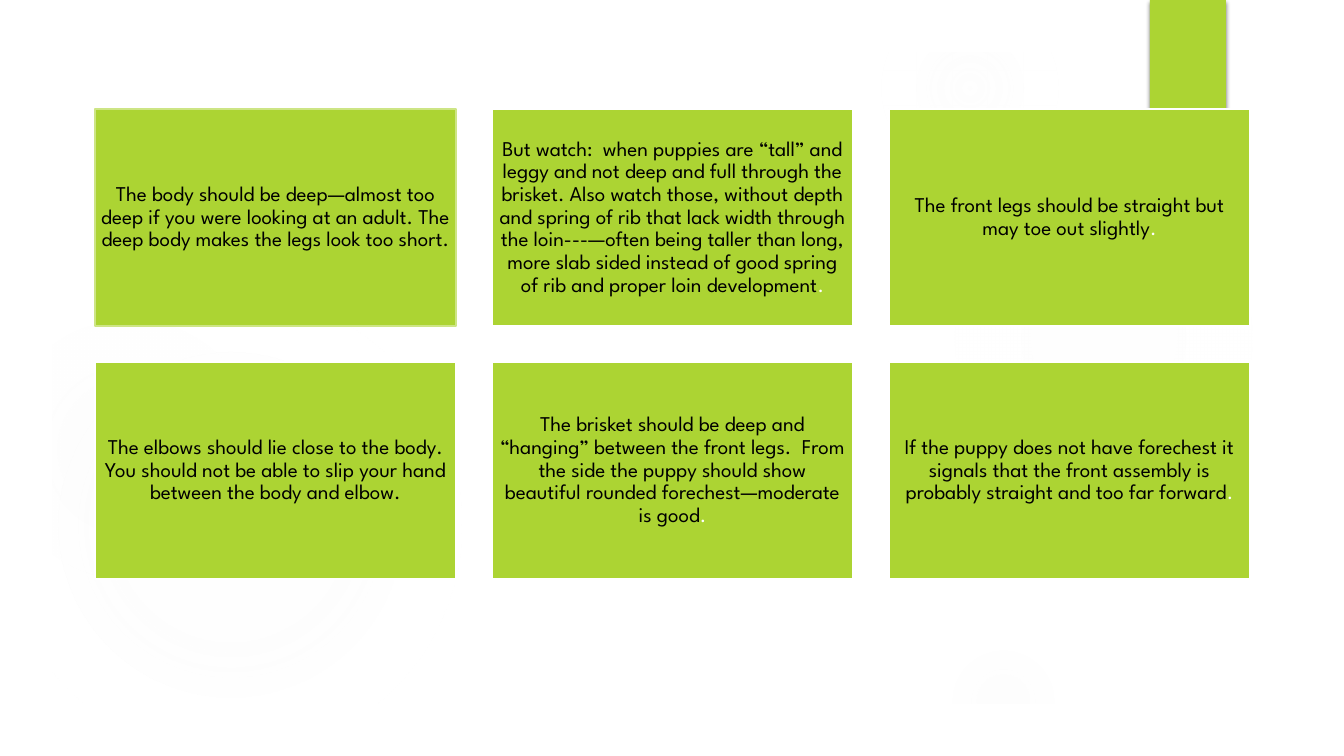
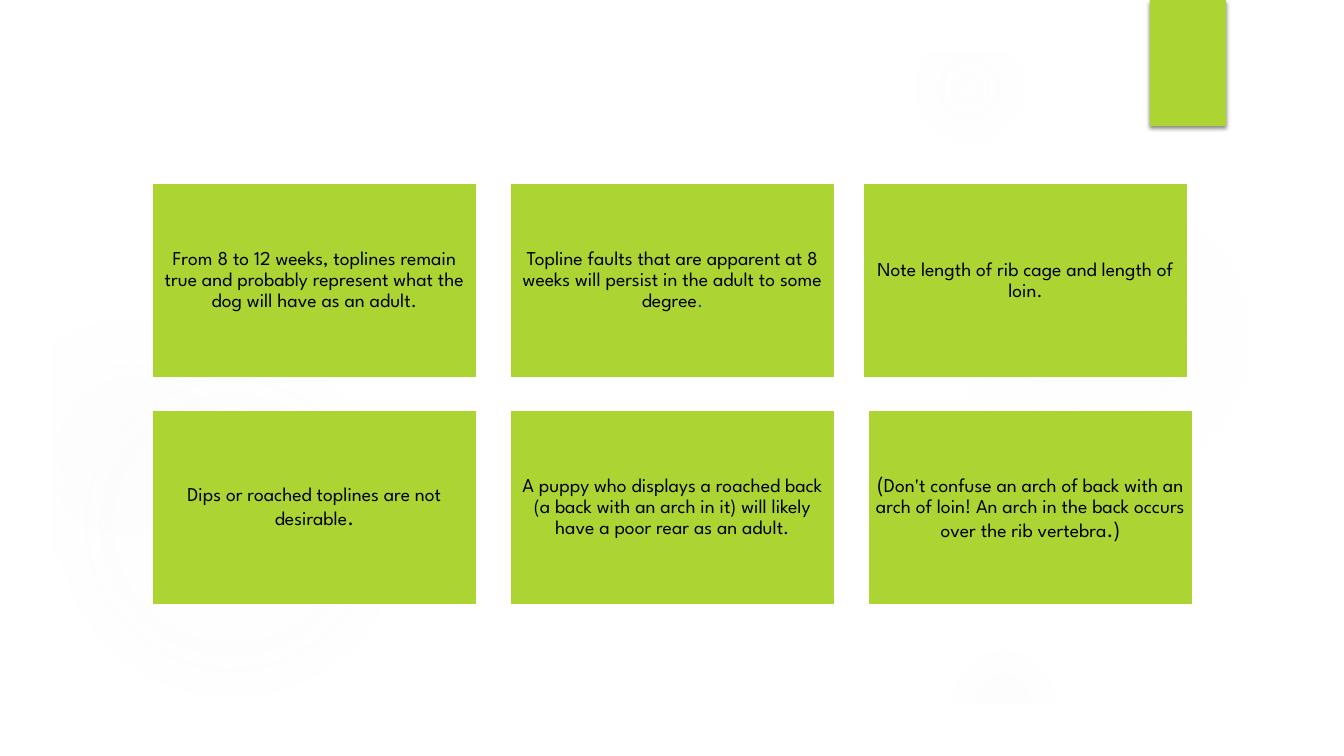
import pptx
import pptx.dml.color
import pptx.enum.shapes
import pptx.enum.text
import pptx.oxml
import pptx.oxml.ns
import pptx.util

RGB = pptx.dml.color.RGBColor
RECT = pptx.enum.shapes.MSO_SHAPE.RECTANGLE
OVAL = pptx.enum.shapes.MSO_SHAPE.OVAL
NS = pptx.oxml.ns.nsdecls("a")

EMU_PER_PX = 9144000 / 1008
WIDTH, HEIGHT = 1344, 756
FONT = "League Spartan"
WHITE = RGB(0xFF, 0xFF, 0xFF)
BLACK = RGB(0, 0, 0)
GREEN = RGB(0xAC, 0xD4, 0x33)
PALE_GREEN = RGB(0xCD, 0xE5, 0x85)
BLUE = RGB(0x0A, 0x4D, 0x9E)
GLOW = RGB(0xF7, 0xF7, 0xF7)

GLOWS = [
    (0, 294, 462, [(0, 11), (36, 10), (75, 0)]),
    (0, 320, 260, [(0, 8), (36, 8), (72, 0)]),
    (949, 184, 310, [(0, 7), (36, 6), (69, 0)]),
    (882, 0, 176, [(0, 14), (36, 7), (73, 0)]),
    (949, 647, 109, [(0, 14), (36, 7), (66, 0)]),
]

BODY_CARDS = [
    [("The body should be deep—almost too deep if you were looking at an adult. "
      "The deep body makes the legs look too short.",)],
    [("But watch:  when puppies are “tall” and leggy and not deep and full through "
      "the brisket. Also watch those, without depth and spring of rib that lack width "
      "through the loin---—often being taller than long, more slab sided instead of "
      "good spring of rib and proper loin development",), (".", WHITE)],
    [("The front legs should be straight but may toe out slightly",), (".", WHITE)],
    [("The elbows should lie close to the body. You should not be able to slip your "
      "hand between the body and elbow.",)],
    [("The brisket should be deep and “hanging” between the front legs.  From the side "
      "the puppy should show beautiful rounded forechest—moderate is good",),
     (".", WHITE)],
    [("If the puppy does not have forechest it signals that the front assembly is "
      "probably straight and too far forward",), (".", WHITE)],
]

TOPLINE_CARDS = [
    [("From 8 to 12 weeks, toplines remain true and probably represent what the dog "
      "will have as an adult.",)],
    [("Topline faults that are apparent at 8 weeks will persist in the adult to some "
      "degree",), (".", BLUE)],
    [("Note length of rib cage and length of loin.",)],
    [("Dips or roached toplines are not desirable",), (".", BLACK, 16)],
    [("A puppy who displays a roached back (a back with an arch in it) will likely "
      "have a poor rear as an adult.",)],
    [("(", BLACK, 16),
     ("Don't confuse an arch of back with an arch of loin! An arch in the back occurs "
      "over the rib vertebra",), (".)", BLACK, 16)],
]


def px(n):
    """Turn pixels into EMU."""
    return pptx.util.Emu(round(n * EMU_PER_PX))


def add_plain(s, kind, x, y, w, h, fill=None):
    """Add a preset shape without line or shadow."""
    sp = s.shapes.add_shape(kind, px(x), px(y), px(w), px(h))
    sp.shadow.inherit = False
    sp.line.fill.background()
    if fill is not None:
        sp.fill.solid()
        sp.fill.fore_color.rgb = fill
    return sp


def add_glow(s, x, y, size, stops):
    """Add a faint round glow that fades outwards."""
    sp = add_plain(s, OVAL, x, y, size, size)
    gs = "".join(
        f'<a:gs pos="{pos * 1000}"><a:srgbClr val="{GLOW}">'
        f'<a:alpha val="{alpha * 1000}"/></a:srgbClr></a:gs>' for pos, alpha in stops)
    grad = pptx.oxml.parse_xml(
        f'<a:gradFill {NS}><a:gsLst>{gs}</a:gsLst><a:path path="circle">'
        '<a:fillToRect l="50000" t="50000" r="50000" b="50000"/></a:path></a:gradFill>')
    sp.element.spPr.insert(2, grad)


def add_frame(s, margin):
    """Add the white frame around the slide."""
    right, bottom = WIDTH - margin, HEIGHT - margin
    fb = s.shapes.build_freeform(0, 0, scale=EMU_PER_PX)
    fb.add_line_segments([(0, HEIGHT), (WIDTH, HEIGHT), (WIDTH, 0)], close=True)
    fb.move_to(right, bottom)
    fb.add_line_segments([(margin, bottom), (margin, margin), (right, margin)], close=True)
    sp = fb.convert_to_shape()
    sp.shadow.inherit = False
    sp.fill.solid()
    sp.fill.fore_color.rgb = WHITE
    sp.line.fill.background()


def add_tab(s, x, y, w, h):
    """Add the green tab with its soft shadow."""
    sp = add_plain(s, RECT, x, y, w, h, GREEN)
    effects = sp.element.spPr.find(pptx.oxml.ns.qn("a:effectLst"))
    effects.append(pptx.oxml.parse_xml(
        f'<a:outerShdw {NS} blurRad="38100" dist="25400" dir="5400000" rotWithShape="0">'
        f'<a:srgbClr val="{BLACK}"><a:alpha val="45000"/></a:srgbClr></a:outerShdw>'))


def build_master(prs, s):
    """Draw the shared backdrop and move it to the slide master."""
    for glow in GLOWS:
        add_glow(s, *glow)
    add_frame(s, 52)
    add_tab(s, 1150, 0, 76, 126)
    tree = prs.slide_master.shapes.element
    for i, sp in enumerate(list(s.shapes)):
        sp.element.nvSpPr.cNvPr.set("id", str(100 + i))
        tree.append(sp.element)


def add_card(s, x, y, w, h, runs, size, border):
    """Add one green card with centred text."""
    sp = add_plain(s, RECT, x, y, w, h, GREEN)
    sp.line.color.rgb = border
    sp.line.width = pptx.util.Pt(1.5)
    tf = sp.text_frame
    tf.word_wrap = True
    tf.vertical_anchor = pptx.enum.text.MSO_ANCHOR.MIDDLE
    tf.margin_left = tf.margin_right = tf.margin_top = tf.margin_bottom = px(6)
    p = tf.paragraphs[0]
    p.alignment = pptx.enum.text.PP_ALIGN.CENTER
    p.line_spacing = 0.9
    for text, *style in runs:
        colour, points = (style + [BLACK, size][len(style):])
        r = p.add_run()
        r.text = text
        r.font.name = FONT
        r.font.size = pptx.util.Pt(points)
        r.font.color.rgb = colour


def add_card_grid(s, box, card, cards, size, borders=None, nudges=None):
    """Spread the cards over three columns and two rows of a box."""
    x, y, w, h = box
    card_w, card_h = card
    for i, runs in enumerate(cards):
        row, col = divmod(i, 3)
        left = x + col * (w - card_w) // 2 + (nudges or {}).get(i, 0)
        top = y + row * (h - card_h)
        add_card(s, left, top, card_w, card_h, runs, size, (borders or {}).get(i, WHITE))


def main():
    """Build the two slides."""
    prs = pptx.Presentation()
    prs.slide_width, prs.slide_height = px(WIDTH), px(HEIGHT)
    body, topline = [prs.slides.add_slide(prs.slide_layouts[6]) for _ in range(2)]
    build_master(prs, body)
    add_card_grid(body, (95, 109, 1155, 470), (361, 217), BODY_CARDS, 15,
                  borders={0: PALE_GREEN})
    add_card_grid(topline, (152, 183, 1041, 422), (325, 195), TOPLINE_CARDS, 14,
                  nudges={2: -5})
    prs.save("out.pptx")


if __name__ == "__main__":
    main()
